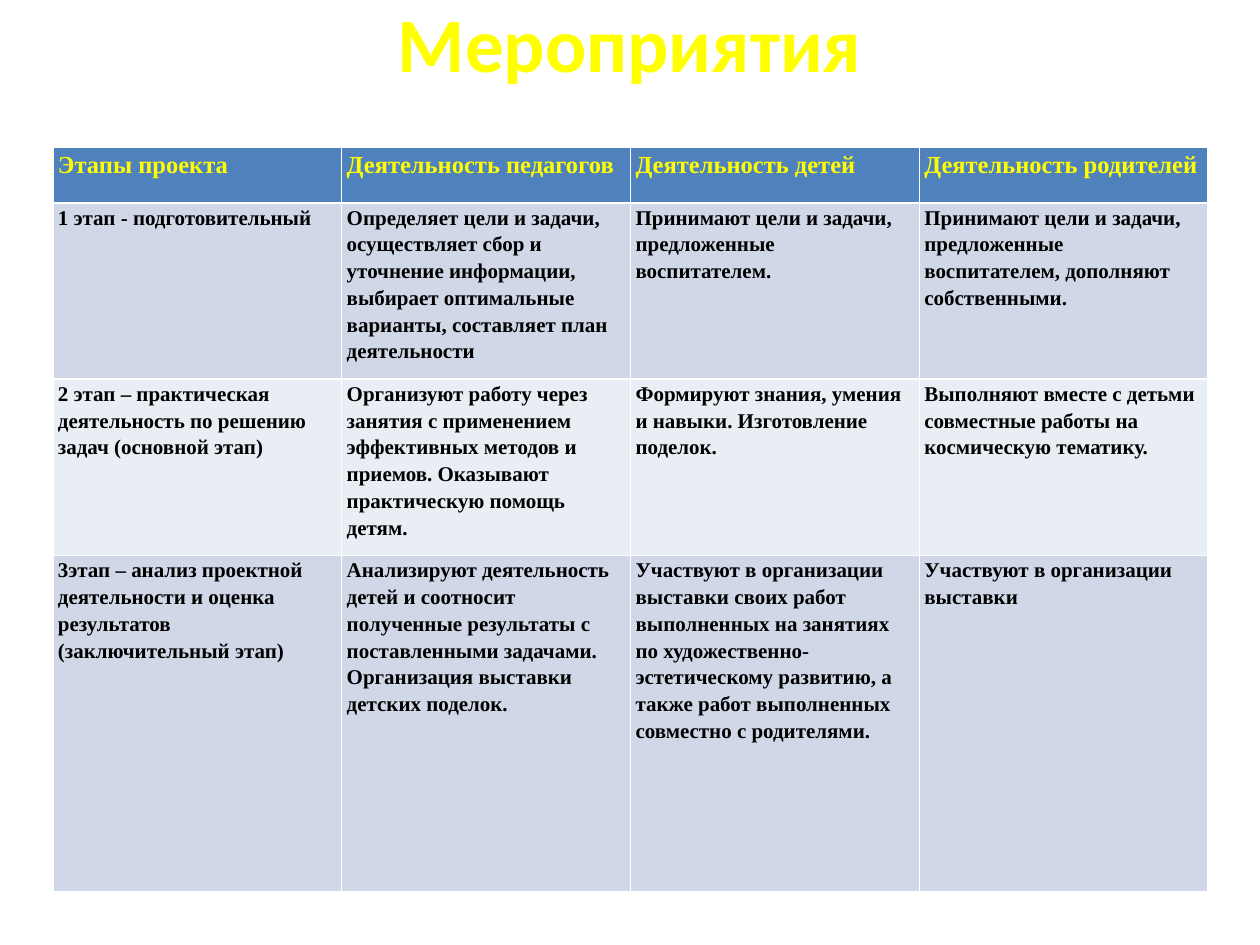
import pptx
import pptx.util
import pptx.dml.color
import pptx.enum.text

WIDTH, HEIGHT = pptx.util.Inches(10), pptx.util.Inches(7.5)
COLORS = {
    "accent": "FFFF00",
    "text": "000000",
    "header": "4F81BD",
    "odd": "D0D8E8",
    "even": "E9EDF4",
}
ALIGN = pptx.enum.text.PP_ALIGN
ANCHOR = pptx.enum.text.MSO_ANCHOR

ROW_SIZES = [0.44, 1.4, 1.4, 2.67]
STAGES = [
    ["Этапы проекта", "Деятельность педагогов", "Деятельность детей",
     "Деятельность родителей"],
    ["1 этап - подготовительный",
     "Определяет цели и задачи, осуществляет сбор и уточнение информации, "
     "выбирает оптимальные варианты, составляет план деятельности",
     "Принимают цели и задачи, предложенные воспитателем.",
     "Принимают цели и задачи, предложенные воспитателем, дополняют "
     "собственными."],
    ["2 этап – практическая деятельность по решению задач (основной этап)",
     "Организуют работу через занятия с применением эффективных методов и "
     "приемов. Оказывают практическую помощь детям.",
     "Формируют знания, умения и навыки. Изготовление поделок.",
     "Выполняют вместе с детьми совместные работы на космическую тематику."],
    ["3этап – анализ проектной деятельности и оценка результатов "
     "(заключительный этап)",
     "Анализируют деятельность детей и соотносит полученные результаты с "
     "поставленными задачами. Организация выставки детских поделок.",
     "Участвуют в организации выставки своих работ выполненных на занятиях "
     "по художественно-эстетическому развитию, а также работ выполненных "
     "совместно с родителями.",
     "Участвуют в организации выставки"],
]


def color(name):
    return pptx.dml.color.RGBColor.from_string(COLORS[name])


def style(para, face, size, shade):
    for run in para.runs:
        run.font.name = face
        run.font.size = pptx.util.Pt(size)
        run.font.bold = True
        run.font.color.rgb = color(shade)


def add_title(slide, text):
    title = slide.shapes.title
    title.left, title.top = int(WIDTH * 0.05), pptx.util.Inches(-0.17)
    title.width, title.height = int(WIDTH * 0.9), pptx.util.Inches(1)
    frame = title.text_frame
    frame.text = text
    frame.vertical_anchor = ANCHOR.MIDDLE
    para = frame.paragraphs[0]
    para.alignment = ALIGN.CENTER
    style(para, "Calibri", 44, "accent")


def fill_cell(cell, text, row, col):
    head = row == 0
    cell.margin_left = cell.margin_right = pptx.util.Inches(0.04)
    cell.margin_top = cell.margin_bottom = 0
    cell.fill.solid()
    band = "odd" if row % 2 else "even"
    cell.fill.fore_color.rgb = color("header" if head else band)
    cell.text_frame.text = text
    para = cell.text_frame.paragraphs[0]
    para.line_spacing = 1.15
    justified = head or (row, col) == (1, 0)
    para.alignment = ALIGN.JUSTIFY if justified else ALIGN.LEFT
    style(para, "Times New Roman", 14 if head else 12,
          "accent" if head else "text")


def add_grid(slide, rows, sizes):
    frame = slide.shapes.add_table(
        len(rows), len(rows[0]),
        pptx.util.Inches(0.42), pptx.util.Inches(1.17),
        pptx.util.Inches(9.17), pptx.util.Inches(sum(sizes)))
    table = frame.table
    for row, (texts, size) in enumerate(zip(rows, sizes)):
        table.rows[row].height = pptx.util.Inches(size)
        for col, text in enumerate(texts):
            fill_cell(table.cell(row, col), text, row, col)


def main():
    deck = pptx.Presentation()
    deck.slide_width, deck.slide_height = WIDTH, HEIGHT
    slide = deck.slides.add_slide(deck.slide_layouts[5])
    add_title(slide, "Мероприятия")
    add_grid(slide, STAGES, ROW_SIZES)
    deck.save("out.pptx")


if __name__ == "__main__":
    main()
